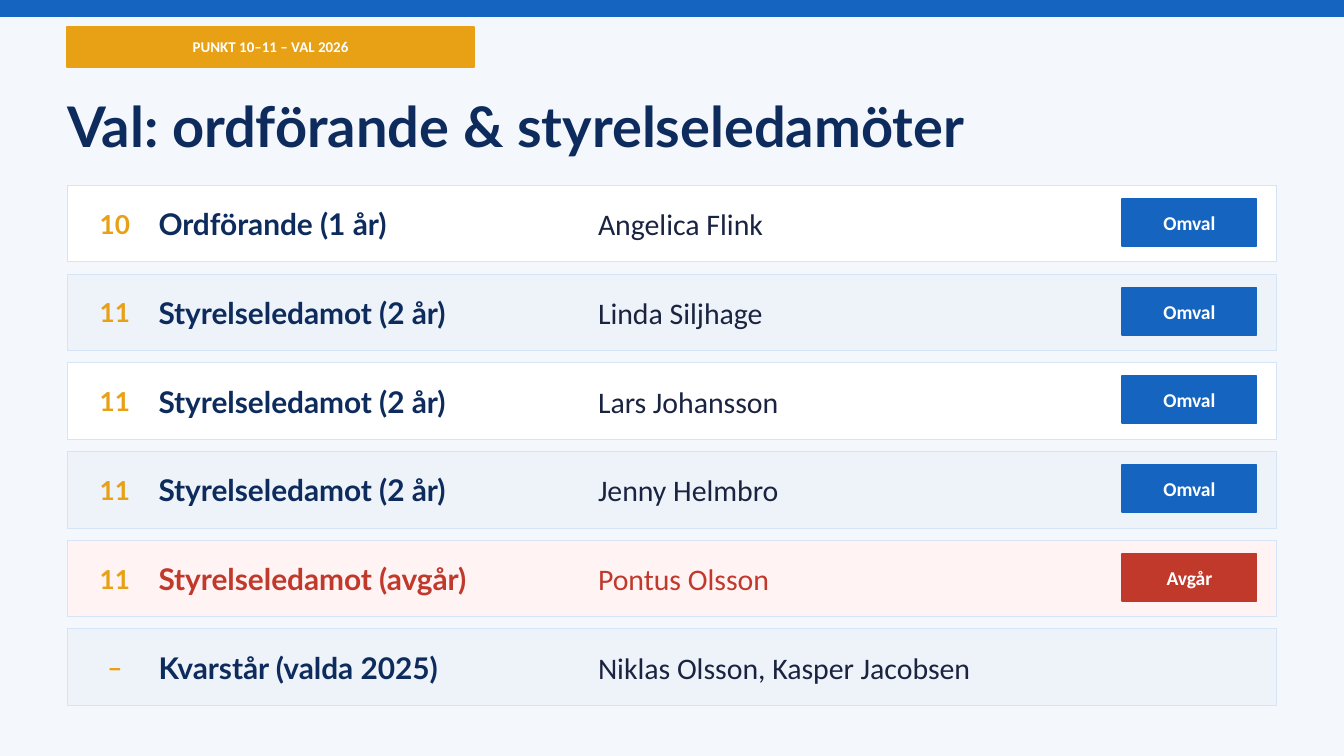
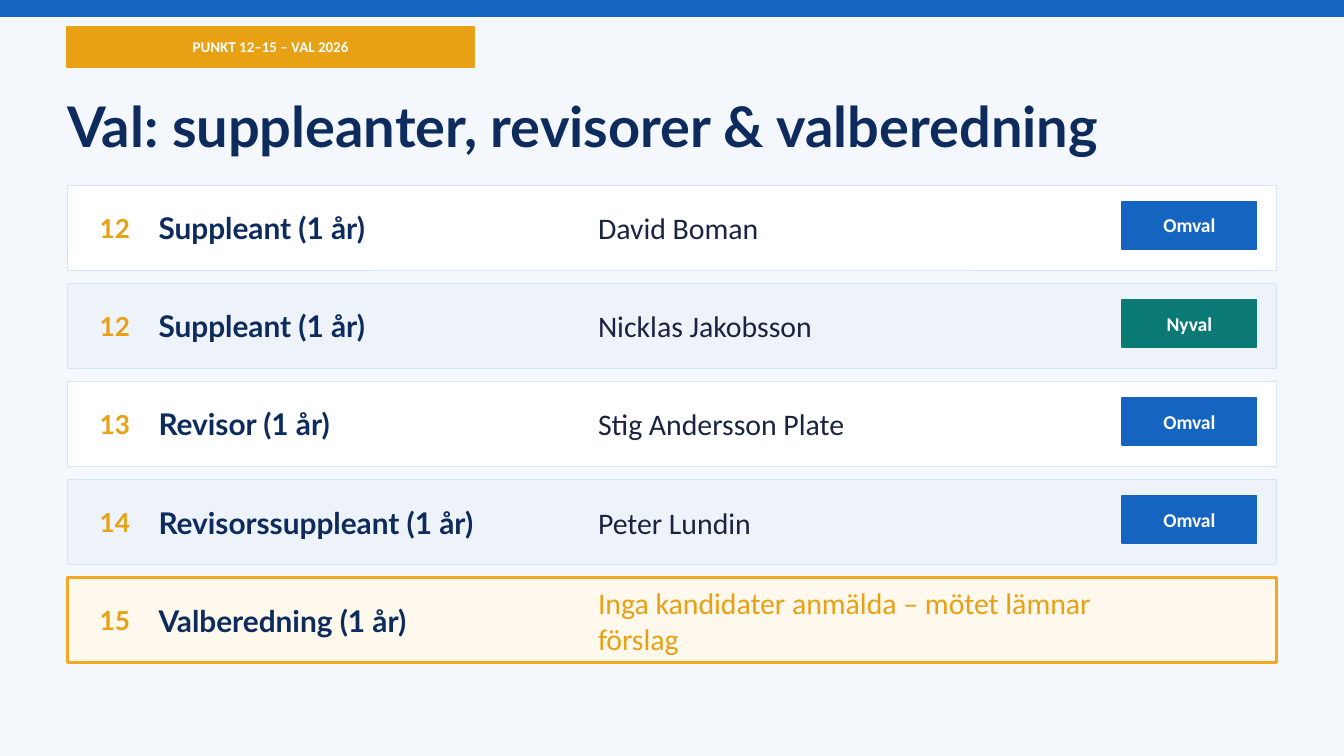
from dataclasses import dataclass

import pptx
import pptx.dml.color
import pptx.enum.shapes
import pptx.enum.text
import pptx.util

PX = 9144  # EMU per px, 100 px to the inch
PAGE_WIDTH = 1000
LEFT, CONTENT_WIDTH, ROWS_TOP = 50, 900, 138
HEADING_FONT, BODY_FONT = "Lato", "Calibri"

COLORS = {
    "page": "F4F7FB",
    "blue": "1565C0",
    "amber": "E8A014",
    "navy": "0D2B5C",
    "ink": "1A2340",
    "red": "C0392B",
    "teal": "0B7A75",
    "white": "FFFFFF",
    "stripe": "EEF3FA",
    "border": "D6E4F7",
    "leaving": "FFF3F3",
    "vacant": "FFF8EC",
    "vacant_border": "F5A623",
}
BADGE_COLORS = {"Omval": "blue", "Nyval": "teal", "Avgår": "red"}


@dataclass(frozen=True)
class Rect:
    left: int
    top: int
    width: int
    height: int

    def emu(self) -> tuple:
        return tuple(
            pptx.util.Emu(n * PX) for n in (self.left, self.top, self.width, self.height)
        )


@dataclass(frozen=True)
class TextStyle:
    font: str
    size: float
    color: str
    bold: bool = True
    centered: bool = False


@dataclass(frozen=True)
class Election:
    item: str
    role: str
    name: str
    badge: str = ""
    role_color: str = "navy"
    name_color: str = "ink"
    fill: str = ""  # empty: alternating stripe
    border: str = "border"
    border_width: float = 0.5


@dataclass(frozen=True)
class RowLayout:
    height: int
    pitch: int
    text_inset: int
    badge_offset: int


@dataclass(frozen=True)
class ElectionPage:
    tag: str
    title: str
    layout: RowLayout
    elections: tuple


TAG = TextStyle(BODY_FONT, 8, "white", centered=True)
TITLE = TextStyle(HEADING_FONT, 30, "navy")
ITEM = TextStyle(HEADING_FONT, 14, "amber", centered=True)
BADGE = TextStyle(BODY_FONT, 10.5, "white", centered=True)

PAGES = (
    ElectionPage(
        "PUNKT 10–11 – VAL 2026",
        "Val: ordförande & styrelseledamöter",
        RowLayout(height=57, pitch=66, text_inset=4, badge_offset=10),
        (
            Election("10", "Ordförande (1 år)", "Angelica Flink", "Omval"),
            Election("11", "Styrelseledamot (2 år)", "Linda Siljhage", "Omval"),
            Election("11", "Styrelseledamot (2 år)", "Lars Johansson", "Omval"),
            Election("11", "Styrelseledamot (2 år)", "Jenny Helmbro", "Omval"),
            Election("11", "Styrelseledamot (avgår)", "Pontus Olsson", "Avgår",
                     role_color="red", name_color="red", fill="leaving"),
            Election("–", "Kvarstår (valda 2025)", "Niklas Olsson, Kasper Jacobsen"),
        ),
    ),
    ElectionPage(
        "PUNKT 12–15 – VAL 2026",
        "Val: suppleanter, revisorer & valberedning",
        RowLayout(height=63, pitch=73, text_inset=5, badge_offset=12),
        (
            Election("12", "Suppleant (1 år)", "David Boman", "Omval"),
            Election("12", "Suppleant (1 år)", "Nicklas Jakobsson", "Nyval"),
            Election("13", "Revisor (1 år)", "Stig Andersson Plate", "Omval"),
            Election("14", "Revisorssuppleant (1 år)", "Peter Lundin", "Omval"),
            Election("15", "Valberedning (1 år)",
                     "Inga kandidater anmälda – mötet lämnar förslag",
                     name_color="amber", fill="vacant",
                     border="vacant_border", border_width=1.5),
        ),
    ),
)


def rgb(name: str) -> pptx.dml.color.RGBColor:
    return pptx.dml.color.RGBColor.from_string(COLORS[name])


def write(box, text: str, style: TextStyle) -> None:
    frame = box.text_frame
    frame.word_wrap = True
    frame.vertical_anchor = pptx.enum.text.MSO_ANCHOR.MIDDLE
    frame.margin_left = frame.margin_top = frame.margin_right = frame.margin_bottom = 0
    para = frame.paragraphs[0]
    para.text = text
    align = pptx.enum.text.PP_ALIGN
    para.alignment = align.CENTER if style.centered else align.LEFT
    para.font.name = style.font
    para.font.size = pptx.util.Pt(style.size)
    para.font.bold = style.bold
    para.font.color.rgb = rgb(style.color)


def add_text(page, rect: Rect, text: str, style: TextStyle) -> None:
    write(page.shapes.add_textbox(*rect.emu()), text, style)


def add_panel(page, rect: Rect, fill: str, border: str = "", border_width: float = 1):
    panel = page.shapes.add_shape(
        pptx.enum.shapes.MSO_SHAPE.RECTANGLE, *rect.emu()
    )
    panel.shadow.inherit = False
    panel.fill.solid()
    panel.fill.fore_color.rgb = rgb(fill)
    panel.line.color.rgb = rgb(border or fill)
    panel.line.width = pptx.util.Pt(border_width)
    return panel


def add_election(page, election: Election, index: int, layout: RowLayout) -> None:
    top = ROWS_TOP + index * layout.pitch
    fill = election.fill or ("white", "stripe")[index % 2]
    add_panel(page, Rect(LEFT, top, CONTENT_WIDTH, layout.height),
              fill, election.border, election.border_width)

    # Item number, role and candidate
    columns = (
        (58, 55, election.item, ITEM),
        (118, 320, election.role, TextStyle(HEADING_FONT, 16, election.role_color)),
        (445, 380, election.name,
         TextStyle(BODY_FONT, 16, election.name_color, bold=False)),
    )
    text_height = layout.height - 2 * layout.text_inset
    for left, width, text, style in columns:
        add_text(page, Rect(left, top + layout.text_inset, width, text_height), text, style)

    # Status badge
    if election.badge:
        badge = add_panel(page, Rect(835, top + layout.badge_offset, 100, 35),
                          BADGE_COLORS[election.badge])
        write(badge, election.badge, BADGE)


def add_page(deck, content: ElectionPage) -> None:
    page = deck.slides.add_slide(deck.slide_layouts[6])
    page.background.fill.solid()
    page.background.fill.fore_color.rgb = rgb("page")

    # Top band, tag and title
    add_panel(page, Rect(0, 0, PAGE_WIDTH, 12), "blue")
    write(add_panel(page, Rect(LEFT, 20, 303, 30), "amber"), content.tag, TAG)
    add_text(page, Rect(LEFT, 58, CONTENT_WIDTH, 70), content.title, TITLE)

    for index, election in enumerate(content.elections):
        add_election(page, election, index, content.layout)


def main() -> None:
    deck = pptx.Presentation()
    deck.slide_width = pptx.util.Emu(PAGE_WIDTH * PX)
    deck.slide_height = pptx.util.Emu(PAGE_WIDTH * PX * 9 // 16)
    for content in PAGES:
        add_page(deck, content)
    deck.save("out.pptx")


if __name__ == "__main__":
    main()
